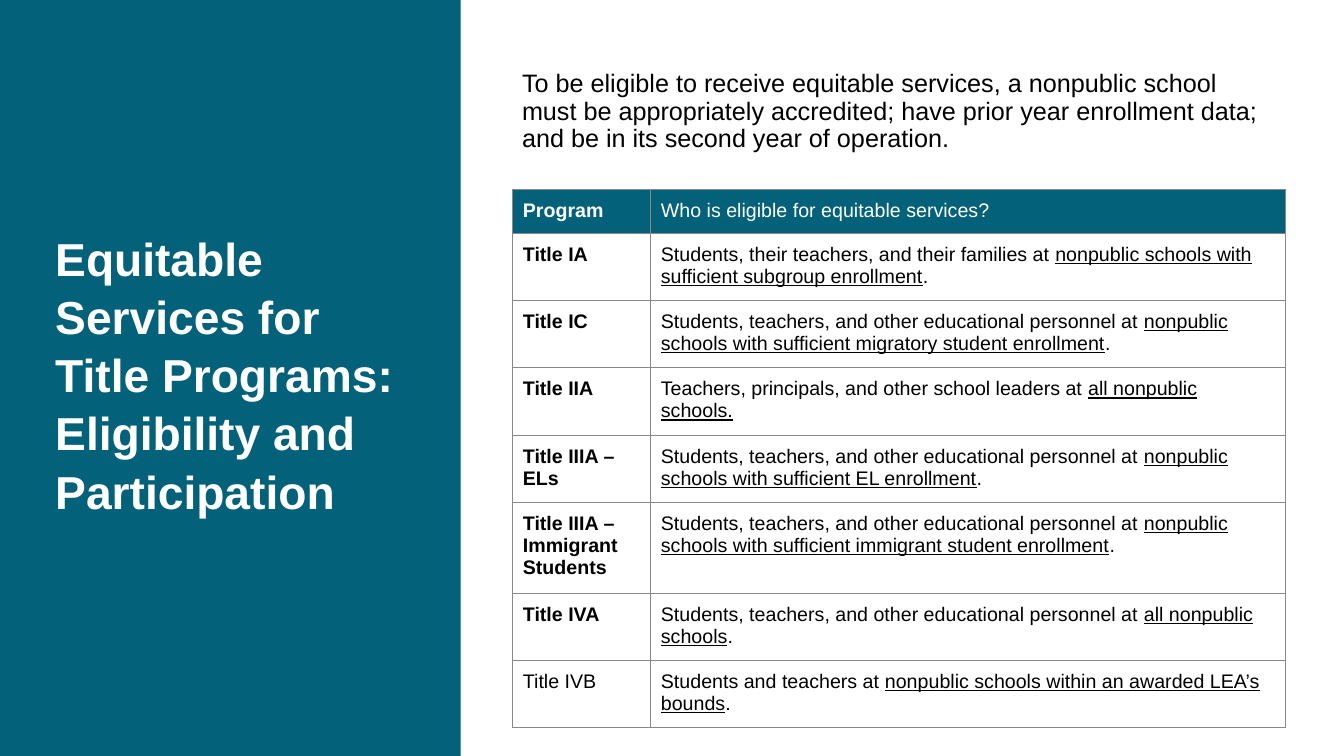
from dataclasses import dataclass

import pptx
import pptx.dml.color
import pptx.enum.shapes
import pptx.enum.text
import pptx.oxml
import pptx.oxml.ns
import pptx.util

Pt = pptx.util.Pt
FONT = "Arial"
COLORS = {"teal": "03617A", "white": "FFFFFF", "black": "000000", "border": "888888"}


@dataclass
class TextBlock:
    text: str
    left: float
    top: float
    width: float
    height: float
    size: float
    color: str
    bold: bool
    line_spacing: float
    space_before: float


@dataclass
class Program:
    name: str
    who: str
    group: str = ""  # underlined part
    end: str = "."
    height: float = 45.4
    name_bold: bool = True
    header: bool = False


STAFF = "Students, teachers, and other educational personnel at "

BLOCKS = [
    TextBlock("Equitable Services for Title Programs: Eligibility and Participation",
              32.4, 33.8, 278.6, 465.1, 33, "white", True, 1.05, 6),
    TextBlock("To be eligible to receive equitable services, a nonpublic school must be "
              "appropriately accredited; have prior year enrollment data; and be in its "
              "second year of operation.",
              365.8, 28.8, 552.2, 102.2, 18, "black", False, 0.9, 7.5),
]

PROGRAMS = [
    Program("Program", "Who is eligible for equitable services?", end="", height=29.5,
            header=True),
    Program("Title IA", "Students, their teachers, and their families at ",
            "nonpublic schools with sufficient subgroup enrollment"),
    Program("Title IC", STAFF,
            "nonpublic schools with sufficient migratory student enrollment"),
    Program("Title IIA", "Teachers, principals, and other school leaders at ",
            "all nonpublic schools.", end=""),
    Program("Title IIIA – ELs", STAFF, "nonpublic schools with sufficient EL enrollment"),
    Program("Title IIIA – Immigrant Students", STAFF,
            "nonpublic schools with sufficient immigrant student enrollment", height=61.3),
    Program("Title IVA", STAFF, "all nonpublic schools"),
    Program("Title IVB", "Students and teachers at ",
            "nonpublic schools within an awarded LEA’s bounds", name_bold=False),
]


def rgb(name: str) -> pptx.dml.color.RGBColor:
    return pptx.dml.color.RGBColor.from_string(COLORS[name])


def set_font(p, size: float, color: str, bold: bool) -> None:
    p.font.name = FONT
    p.font.size = Pt(size)
    p.font.bold = bold
    p.font.color.rgb = rgb(color)


def add_text(s, block: TextBlock) -> None:
    sp = s.shapes.add_textbox(Pt(block.left), Pt(block.top), Pt(block.width), Pt(block.height))
    tf = sp.text_frame
    tf.word_wrap = True
    tf.vertical_anchor = pptx.enum.text.MSO_ANCHOR.MIDDLE
    p = tf.paragraphs[0]
    p.text = block.text
    p.line_spacing = block.line_spacing
    p.space_before = Pt(block.space_before)
    set_font(p, block.size, block.color, block.bold)


def set_borders(cell) -> None:
    tc_pr = cell._tc.get_or_add_tcPr()
    for i, side in enumerate(("lnL", "lnR", "lnT", "lnB")):
        tc_pr.insert(i, pptx.oxml.parse_xml(
            f'<a:{side} {pptx.oxml.ns.nsdecls("a")} w="{Pt(1)}"><a:solidFill>'
            f'<a:srgbClr val="{COLORS["border"]}"/></a:solidFill></a:{side}>'))


def fill_cell(cell, parts: list[tuple[str, bool]], bold: bool, header: bool) -> None:
    cell.margin_left = cell.margin_right = Pt(7.7)
    cell.margin_top = cell.margin_bottom = Pt(7.2)
    p = cell.text_frame.paragraphs[0]
    for text, underline in parts:
        if text:
            r = p.add_run()
            r.text = text
            if underline:
                r.font.underline = True
    set_font(p, 14, "white" if header else "black", bold)
    cell.fill.solid()
    cell.fill.fore_color.rgb = rgb("teal" if header else "white")
    set_borders(cell)


def add_programs(s, programs: list[Program]) -> None:
    widths = (98.6, 453.6)
    height = sum(program.height for program in programs)
    table = s.shapes.add_table(len(programs), len(widths), Pt(365.8), Pt(135.4),
                               Pt(sum(widths)), Pt(height)).table
    for column, width in zip(table.columns, widths):
        column.width = Pt(width)
    for i, program in enumerate(programs):
        table.rows[i].height = Pt(program.height)
        fill_cell(table.cell(i, 0), [(program.name, False)], program.name_bold, program.header)
        who = [(program.who, False), (program.group, True), (program.end, False)]
        fill_cell(table.cell(i, 1), who, False, program.header)


def main() -> None:
    prs = pptx.Presentation()
    prs.slide_width, prs.slide_height = Pt(960), Pt(540)
    s = prs.slides.add_slide(prs.slide_layouts[6])

    # Side panel
    panel = s.shapes.add_shape(pptx.enum.shapes.MSO_SHAPE.RECTANGLE,
                               Pt(0), Pt(0), Pt(329), prs.slide_height)
    panel.shadow.inherit = False
    panel.fill.solid()
    panel.fill.fore_color.rgb = rgb("teal")
    panel.line.fill.background()

    # Title and introduction
    for block in BLOCKS:
        add_text(s, block)

    # Eligibility table
    add_programs(s, PROGRAMS)

    prs.save("out.pptx")


if __name__ == "__main__":
    main()
